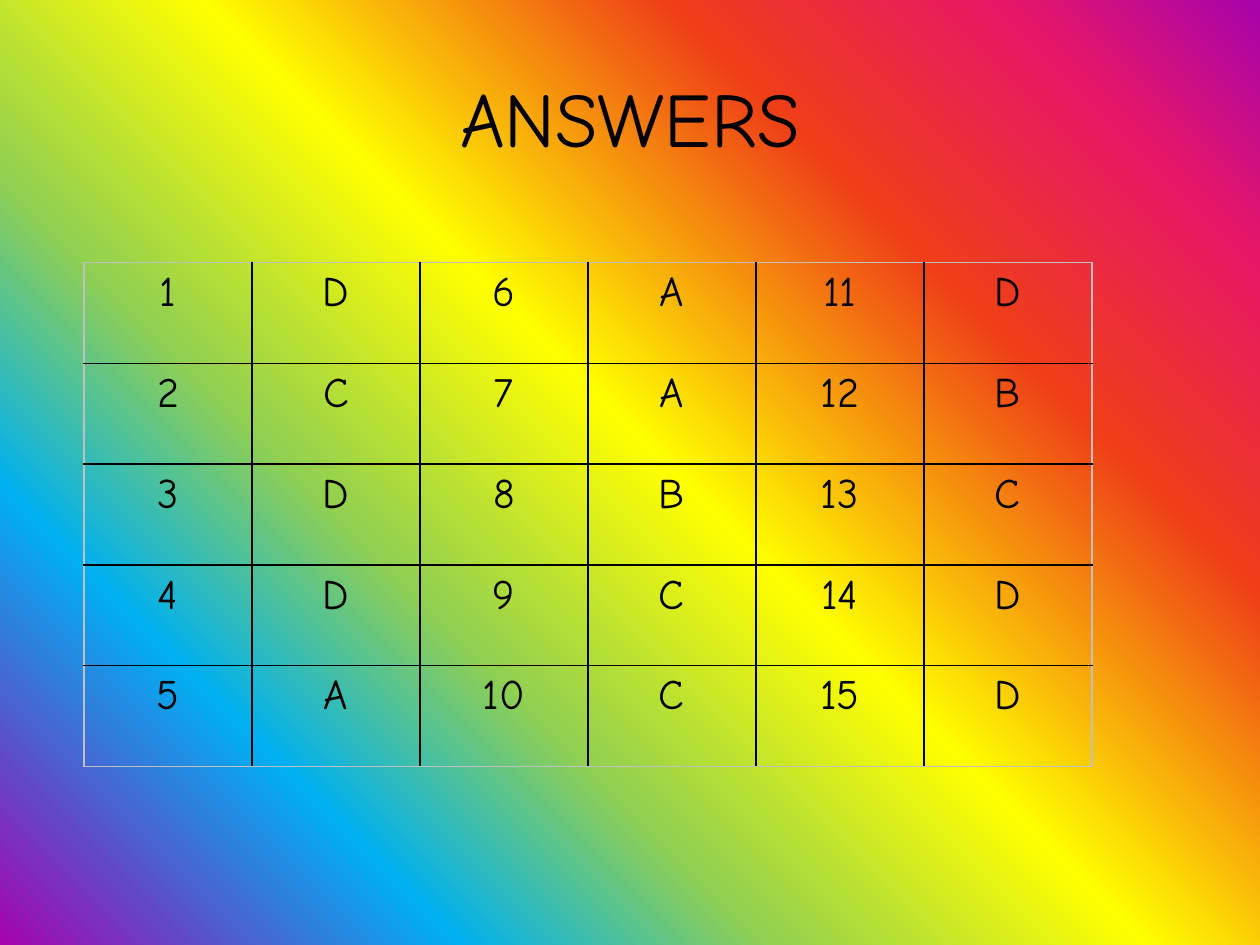
from pptx import Presentation
from pptx.dml.color import RGBColor
from pptx.enum.text import MSO_ANCHOR, PP_ALIGN
from pptx.oxml.ns import qn
from pptx.util import Pt
from lxml.etree import SubElement

TITLE = "ANSWERS"
ANSWERS = "DCDDAAABCCDBCDD"
RAINBOW = [(0, "A603AB"), (21, "00B0F0"), (35, "92D050"), (52, "FFFF00"),
           (73, "EE3F17"), (88, "E81766"), (100, "A603AB")]
FOCUS = {"l": 0, "t": 100, "r": 100, "b": 0}
FONT = "Comic Neue"
INK, FRAME = "000000", "C0C0C0"
ROWS, PAIRS = 5, 3
COLUMNS = PAIRS * 2
LEFT, TOP, WIDTH, HEIGHT = 48, 150, 576, 288


def color(value):
    return RGBColor.from_string(value)


def write(frame, text, size, anchor):
    frame.vertical_anchor = anchor
    paragraph = frame.paragraphs[0]
    paragraph.alignment = PP_ALIGN.CENTER
    run = paragraph.add_run()
    run.text = text
    run.font.size = Pt(size)
    run.font.name = FONT
    run.font.color.rgb = color(INK)


def add_color(parent, value):
    SubElement(parent, qn("a:srgbClr"), val=str(color(value)))


def paint_background(slide):
    slide.background.fill.gradient()
    gradient = next(slide.element.iter(qn("a:gradFill")))
    for child in list(gradient):
        gradient.remove(child)
    stops = SubElement(gradient, qn("a:gsLst"))
    for position, value in RAINBOW:
        add_color(SubElement(stops, qn("a:gs"), pos=str(position * 1000)), value)
    shade = SubElement(gradient, qn("a:path"), path="circle")
    SubElement(shade, qn("a:fillToRect"),
               {side: str(percent * 1000) for side, percent in FOCUS.items()})


def add_borders(cell, row, column):
    outer = {"L": column == 0, "R": column == COLUMNS - 1,
             "T": row == 0, "B": row == ROWS - 1}
    properties = cell._tc.get_or_add_tcPr()
    for side, is_outer in outer.items():
        line = SubElement(properties, qn(f"a:ln{side}"), w=str(Pt(1)))
        add_color(SubElement(line, qn("a:solidFill")), FRAME if is_outer else INK)


def add_answers(slide):
    table = slide.shapes.add_table(
        ROWS, COLUMNS, Pt(LEFT), Pt(TOP), Pt(WIDTH), Pt(HEIGHT)).table
    table.first_row = table.horz_banding = False
    for column in range(COLUMNS):
        for row in range(ROWS):
            number = column // 2 * ROWS + row + 1
            text = ANSWERS[number - 1] if column % 2 else str(number)
            cell = table.cell(row, column)
            write(cell.text_frame, text, 24, None)
            add_borders(cell, row, column)
            cell.fill.background()


def main():
    presentation = Presentation()
    presentation.slide_width, presentation.slide_height = Pt(720), Pt(540)
    slide = presentation.slides.add_slide(presentation.slide_layouts[5])
    paint_background(slide)
    title = slide.shapes.title
    title.left, title.top, title.width, title.height = Pt(36), Pt(21.6), Pt(648), Pt(90)
    write(title.text_frame, TITLE, 44, MSO_ANCHOR.MIDDLE)
    add_answers(slide)
    presentation.save("out.pptx")


if __name__ == "__main__":
    main()
